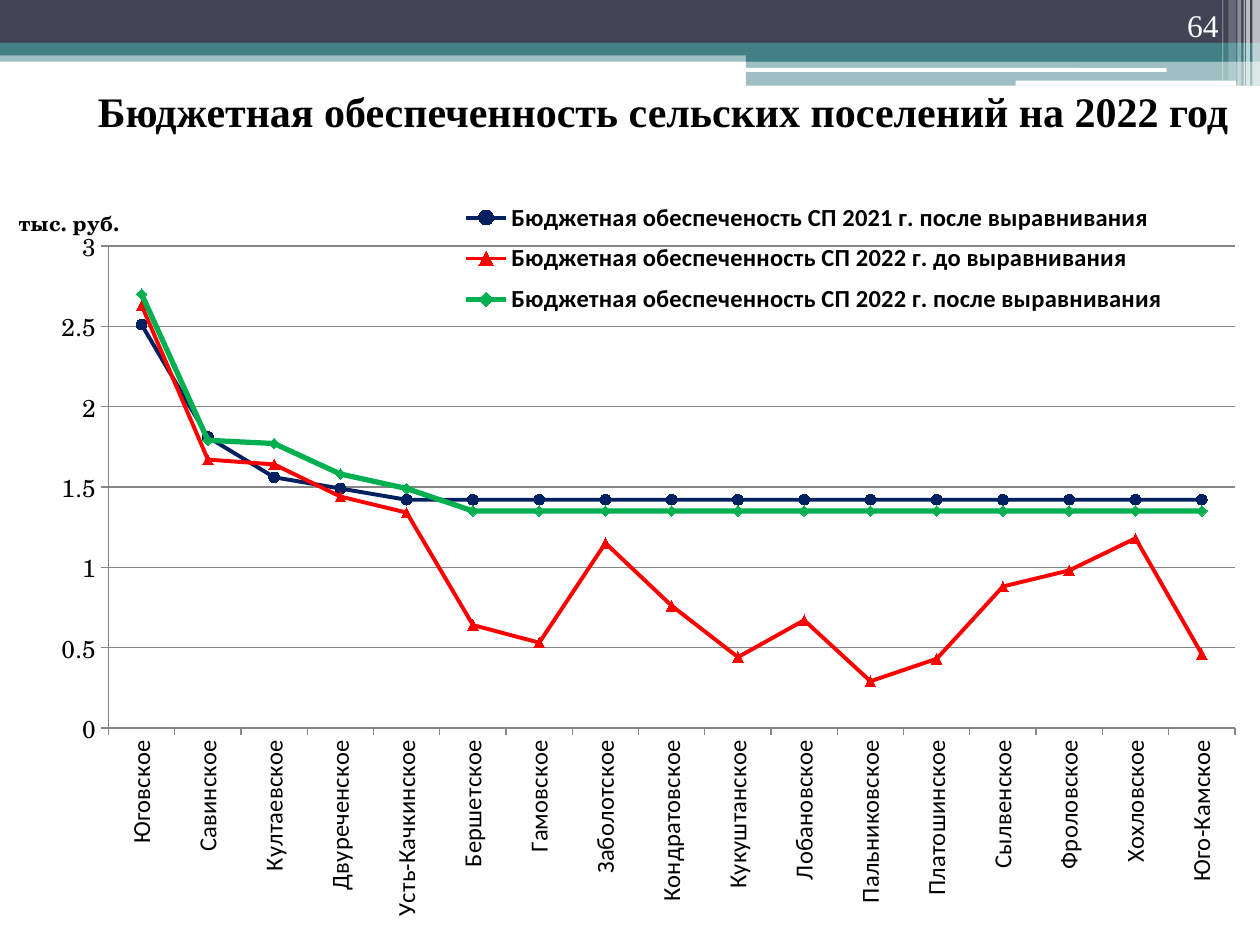
from lxml import etree
from pptx import Presentation
from pptx.chart.data import CategoryChartData
from pptx.dml.color import RGBColor
from pptx.enum.chart import XL_CHART_TYPE, XL_LEGEND_POSITION, XL_MARKER_STYLE, XL_TICK_MARK
from pptx.enum.shapes import MSO_SHAPE
from pptx.enum.text import MSO_ANCHOR, PP_ALIGN
from pptx.oxml.ns import qn
from pptx.util import Inches, Pt

RECTANGLE = MSO_SHAPE.RECTANGLE
ROUNDED = MSO_SHAPE.ROUNDED_RECTANGLE
LINE_MARKERS = XL_CHART_TYPE.LINE_MARKERS
LEGEND_BOTTOM = XL_LEGEND_POSITION.BOTTOM
TICK_OUTSIDE = XL_TICK_MARK.OUTSIDE
CIRCLE, TRIANGLE, DIAMOND = XL_MARKER_STYLE.CIRCLE, XL_MARKER_STYLE.TRIANGLE, XL_MARKER_STYLE.DIAMOND
CENTER, RIGHT = PP_ALIGN.CENTER, PP_ALIGN.RIGHT
MIDDLE, BOTTOM = MSO_ANCHOR.MIDDLE, MSO_ANCHOR.BOTTOM

SERIF, SANS, SCHOOL = "Times New Roman", "Calibri", "TeX Gyre Schola"
NAVY, TEAL, WHITE, BLACK, GRAY = "424456", "438086", "FFFFFF", "000000", "868686"

BANDS = [
    (0, 0.4, 10, 0.09, TEAL, 50),
    (0, 0, 10, 0.34, NAVY, 100),
    (0, 0.34, 10, 0.1, TEAL, 100),
    (5.92, 0.39, 4.08, 0.1, TEAL, 100),
    (5.92, 0.48, 4.08, 0.2, TEAL, 50),
]
HIGHLIGHTS = [(5.91, 0.54, 3.35, 0.03), (8.06, 0.64, 1.75, 0.04)]
STRIPES = [
    (9.94, 0.06, 0.68, 65),
    (9.89, 0.03, 0.68, 65),
    (9.87, 0.01, 0.68, 60),
    (9.82, 0.03, 0.68, 40),
    (9.75, 0.06, 0.64, 20),
    (9.7, 0.01, 0.64, 30),
]

SETTLEMENTS = [
    "Юговское", "Савинское", "Култаевское", "Двуреченское", "Усть-Качкинское",
    "Бершетское", "Гамовское", "Заболотское", "Кондратовское", "Кукуштанское",
    "Лобановское", "Пальниковское", "Платошинское", "Сылвенское", "Фроловское",
    "Хохловское", "Юго-Камское",
]
SERIES = [
    ("Бюджетная обеспеченость СП 2021 г. после выравнивания",
     [2.51, 1.81, 1.56, 1.49] + [1.42] * 13, "002060", 2.25, CIRCLE),
    ("Бюджетная обеспеченность СП 2022 г. до выравнивания",
     [2.63, 1.67, 1.64, 1.44, 1.34, 0.64, 0.53, 1.15, 0.76, 0.44, 0.67, 0.29,
      0.43, 0.88, 0.98, 1.18, 0.46], "FF0000", 2.25, TRIANGLE),
    ("Бюджетная обеспеченность СП 2022 г. после выравнивания",
     [2.7, 1.79, 1.77, 1.58, 1.49] + [1.35] * 12, "00B050", 3, DIAMOND),
]


def color(value):
    return RGBColor.from_string(value)


def set_font(font, name, size, value=BLACK, bold=False):
    font.name = name
    font.size = Pt(size)
    font.bold = bold
    font.color.rgb = color(value)


def add_block(slide, box, fill, opacity=100, preset=RECTANGLE):
    shape = slide.shapes.add_shape(preset, *map(Inches, box))
    shape.shadow.inherit = False
    shape.fill.solid()
    shape.fill.fore_color.rgb = color(fill)
    shape.line.fill.background()
    if opacity < 100:
        fill_color = shape.fill._xPr.find(qn("a:solidFill"))[0]
        etree.SubElement(fill_color, qn("a:alpha"), val=str(opacity * 1000))


def add_header(slide):
    for *box, fill, opacity in BANDS:
        add_block(slide, box, fill, opacity)
    for box in HIGHLIGHTS:
        add_block(slide, box, WHITE, preset=ROUNDED)
    for left, width, height, opacity in STRIPES:
        add_block(slide, (left, 0, width, height), WHITE, opacity)


def fill_text(shape, text, size, value, bold, alignment, anchor):
    frame = shape.text_frame
    frame.text = text
    frame.word_wrap = True
    frame.vertical_anchor = anchor
    paragraph = frame.paragraphs[0]
    paragraph.alignment = alignment
    set_font(paragraph.runs[0].font, SERIF, size, value, bold)


def add_title(slide, box):
    title = slide.shapes.title
    title.left, title.top, title.width, title.height = map(Inches, box)
    fill_text(title, "Бюджетная обеспеченность сельских поселений на 2022 год",
              24, BLACK, True, CENTER, MIDDLE)
    title.text_frame.margin_left = title.text_frame.margin_right = 0


def add_page_number(slide, box):
    number = slide.shapes.add_textbox(*map(Inches, box))
    fill_text(number, "64", 18, WHITE, False, RIGHT, BOTTOM)


def set_layout(parent, index, **values):
    for old in parent.findall(qn("c:layout")):
        parent.remove(old)
    layout = etree.Element(qn("c:layout"))
    manual = etree.SubElement(layout, qn("c:manualLayout"))
    for tag, value in values.items():
        etree.SubElement(manual, qn(f"c:{tag}"), val=str(value))
    parent.insert(index, layout)


def format_axis(axis, font_name):
    axis.major_tick_mark = TICK_OUTSIDE
    axis.format.line.color.rgb = color(GRAY)
    axis.format.line.width = Pt(0.75)
    set_font(axis.tick_labels.font, font_name, 14)


def format_axes(chart):
    categories, values = chart.category_axis, chart.value_axis
    format_axis(categories, SANS)
    body = categories._element.find(qn("c:txPr")).find(qn("a:bodyPr"))
    body.set("rot", "-5400000")
    body.set("vert", "horz")

    format_axis(values, SCHOOL)
    values.minimum_scale, values.maximum_scale, values.major_unit = 0, 3, 0.5
    values.tick_labels.number_format = "General"
    values.tick_labels.number_format_is_linked = False
    values.major_gridlines.format.line.color.rgb = color(GRAY)
    values.major_gridlines.format.line.width = Pt(0.75)
    frame = values.axis_title.text_frame
    frame.text = "тыс. руб."
    set_font(frame.paragraphs[0].runs[0].font, SCHOOL, 12, bold=True)
    frame._txBody.find(qn("a:bodyPr")).set("rot", "0")
    set_layout(values.axis_title._element, 1, xMode="edge", yMode="edge", x=0, y=0.07)


def format_series(series, value, width, marker):
    series.smooth = False
    series.format.line.color.rgb = color(value)
    series.format.line.width = Pt(width)
    series.marker.style = marker
    series.marker.size = 6
    series.marker.format.fill.solid()
    series.marker.format.fill.fore_color.rgb = color(value)
    series.marker.format.line.color.rgb = color(value)


def add_budget_chart(slide, box):
    data = CategoryChartData(number_format="General")
    data.categories = SETTLEMENTS
    for name, values, *_ in SERIES:
        data.add_series(name, values)
    chart = slide.shapes.add_chart(LINE_MARKERS, *map(Inches, box), data).chart
    chart.has_title = False
    set_font(chart.font, SCHOOL, 18)
    chart.plots[0].vary_by_categories = False
    for series, (_, _, *style) in zip(chart.plots[0].series, SERIES):
        format_series(series, *style)
    format_axes(chart)
    set_layout(chart._chartSpace.chart.plotArea, 0, layoutTarget="inner", xMode="edge",
               yMode="edge", x=0.076, y=0.129, w=0.916, h=0.615)

    chart.has_legend = True
    chart.legend.position = LEGEND_BOTTOM
    chart.legend.include_in_layout = False
    set_font(chart.legend.font, SANS, 14, bold=True)
    set_layout(chart.legend._element, 1, xMode="edge", yMode="edge",
               x=0.36, y=0.06, w=0.58, h=0.17)


def main():
    presentation = Presentation()
    presentation.slide_width, presentation.slide_height = Inches(10), Inches(7.5)
    slide = presentation.slides.add_slide(presentation.slide_layouts[5])
    add_header(slide)
    add_title(slide, (0.66, 0.47, 9.21, 0.82))
    add_budget_chart(slide, (0.12, 1.15, 9.76, 6.22))
    add_page_number(slide, (8.94, 0, 0.83, 0.4))
    presentation.save("out.pptx")


if __name__ == "__main__":
    main()
